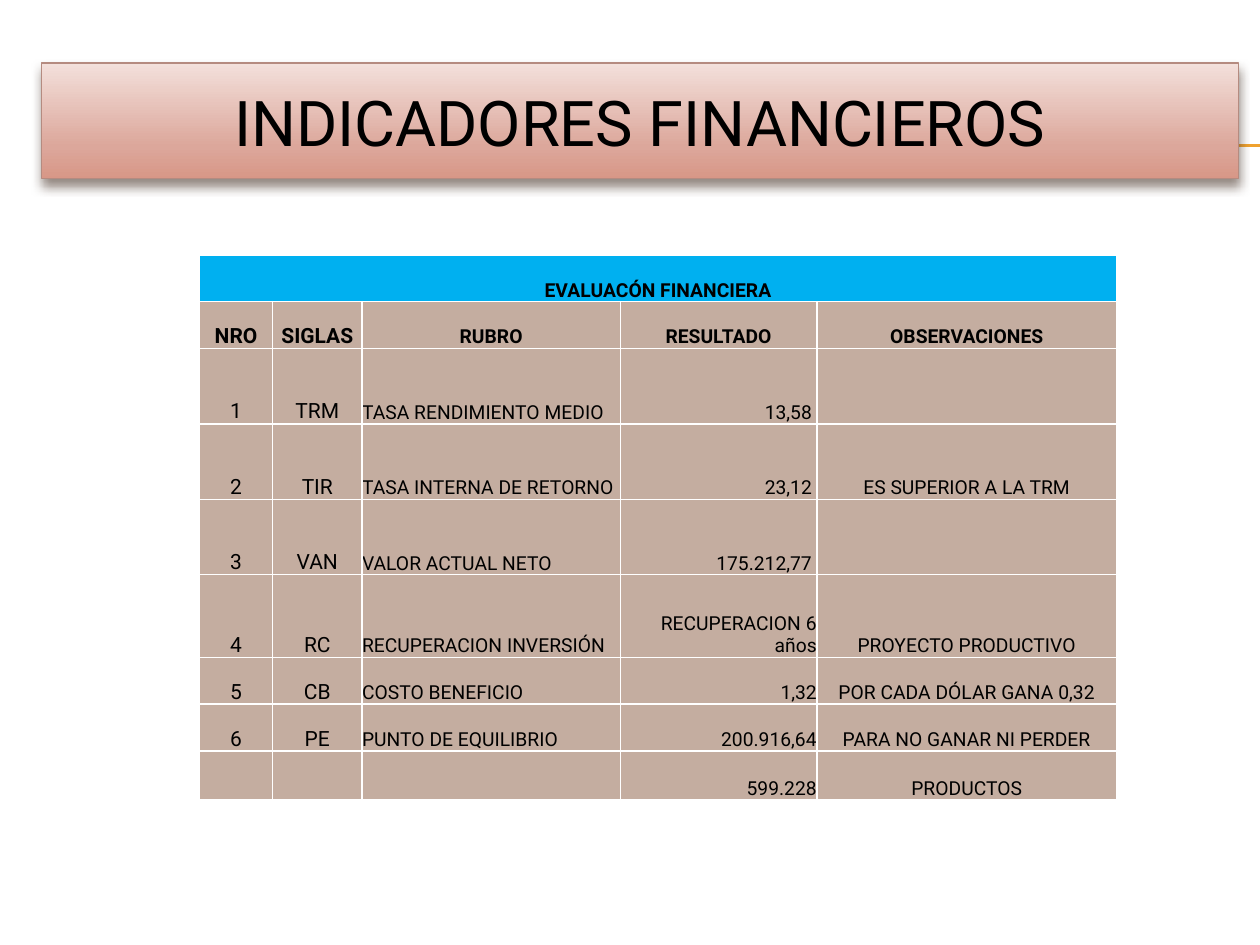
from lxml import etree
from pptx import Presentation
from pptx import oxml, util as u
from pptx.dml.color import RGBColor
from pptx.enum import shapes, text

Pt = u.Pt
BLACK = RGBColor(0x00, 0x00, 0x00)
WHITE = RGBColor(0xFF, 0xFF, 0xFF)
ORANGE = RGBColor(0xF0, 0xA2, 0x2E)
BROWN = RGBColor(0xB5, 0x8B, 0x80)
SHADOW = RGBColor(0x4E, 0x3B, 0x30)
BLUE = RGBColor(0x00, 0xB0, 0xF0)
TAN = RGBColor(0xC4, 0xAD, 0xA0)
STOPS = [(0, RGBColor(0xF3, 0xE0, 0xDB)), (72, RGBColor(0xDC, 0xA7, 0x9B)),
         (100, RGBColor(0xD8, 0x97, 0x87))]
NS = 'xmlns:a="http://schemas.openxmlformats.org/drawingml/2006/main"'
LEFT, CENTER, RIGHT = text.PP_ALIGN.LEFT, text.PP_ALIGN.CENTER, text.PP_ALIGN.RIGHT


def add_xml(parent, xml):
    parent.append(oxml.parse_xml(xml))


def style(p, size, align, bold=False):
    p.alignment = align
    p.font.name = "Roboto"
    p.font.size = Pt(size)
    p.font.bold = bold
    p.font.color.rgb = BLACK


prs = Presentation()
prs.slide_width, prs.slide_height = Pt(720), Pt(540)
s = prs.slides.add_slide(prs.slide_layouts[6])

for y in (82.8, 83.5):
    line = s.shapes.add_connector(shapes.MSO_CONNECTOR.STRAIGHT, Pt(40.3), Pt(y), Pt(720), Pt(y))
    line.line.color.rgb = ORANGE
    line.line.width = Pt(0.75)
    add_xml(line._element.spPr, f"<a:effectLst {NS}/>")

sp = s.shapes.add_shape(shapes.MSO_SHAPE.RECTANGLE, Pt(23.8), Pt(36), Pt(684), Pt(66.2))
sp.line.color.rgb = BROWN
sp.line.width = Pt(0.79)
sp.fill.gradient()
sp.fill.gradient_angle = 270
stops = sp._element.spPr.find(".//" + oxml.ns.qn("a:gsLst"))
for stop in list(stops):
    stops.remove(stop)
for pos, color in STOPS:
    add_xml(stops, f'<a:gs {NS} pos="{pos * 1000}"><a:srgbClr val="{color}"/></a:gs>')
sp.shadow.inherit = False
add_xml(sp._element.spPr.find(oxml.ns.qn("a:effectLst")),
        f'<a:outerShdw {NS} blurRad="{Pt(6)}" dist="{Pt(4)}" dir="5400000" rotWithShape="0">'
        f'<a:srgbClr val="{SHADOW}"><a:alpha val="60000"/></a:srgbClr></a:outerShdw>')
tf = sp.text_frame
tf.word_wrap = True
tf.vertical_anchor = text.MSO_ANCHOR.MIDDLE
p = tf.paragraphs[0]
p.text = "INDICADORES FINANCIEROS"
style(p, 36, CENTER)

rows = [
    ["EVALUACÓN FINANCIERA", "", "", "", ""],
    ["NRO", "SIGLAS", "RUBRO", "RESULTADO", "OBSERVACIONES"],
    ["1", "TRM", "TASA RENDIMIENTO MEDIO", "13,58", ""],
    ["2", "TIR", "TASA INTERNA DE RETORNO", "23,12", "ES SUPERIOR A LA TRM"],
    ["3", "VAN", "VALOR ACTUAL NETO", "175.212,77", ""],
    ["4", "RC", "RECUPERACION INVERSIÓN", "RECUPERACION 6 años", "PROYECTO PRODUCTIVO"],
    ["5", "CB", "COSTO BENEFICIO", "1,32", "POR CADA DÓLAR GANA 0,32"],
    ["6", "PE", "PUNTO DE EQUILIBRIO", "200.916,64", "PARA NO GANAR NI PERDER"],
    ["", "", "", "599.228", "PRODUCTOS"],
]
widths = [41.8, 51.1, 147.6, 112.3, 171.4]
heights = [26.8, 26.8, 43.1, 43.1, 43.1, 47.2, 26.8, 26.8, 28]
aligns = [CENTER, CENTER, LEFT, RIGHT, CENTER]

table = s.shapes.add_table(len(rows), len(widths), Pt(114), Pt(145.6),
                           Pt(sum(widths)), Pt(sum(heights))).table
for column, width in zip(table.columns, widths):
    column.width = Pt(width)
for row, height in zip(table.rows, heights):
    row.height = Pt(height)

for i, values in enumerate(rows):
    header = i < 2
    for j, value in enumerate(values):
        cell = table.cell(i, j)
        cell.margin_left = cell.margin_top = cell.margin_bottom = 0
        cell.margin_right = Pt(2.8) if j == 3 and i in (2, 3, 4) else 0
        cell.vertical_anchor = text.MSO_ANCHOR.BOTTOM
        for side in "LRTB":
            add_xml(cell._tc.get_or_add_tcPr(),
                    f'<a:ln{side} {NS} w="{Pt(1)}"><a:solidFill><a:srgbClr val="{WHITE}"/>'
                    f'</a:solidFill></a:ln{side}>')
        cell.fill.solid()
        cell.fill.fore_color.rgb = BLUE if i == 0 else TAN
        p = cell.text_frame.paragraphs[0]
        if value:
            p.text = value
        style(p, 12 if i > 0 and j < 2 else 11, CENTER if header else aligns[j], header)
table.cell(0, 0).merge(table.cell(0, 4))

prs.save("out.pptx")
